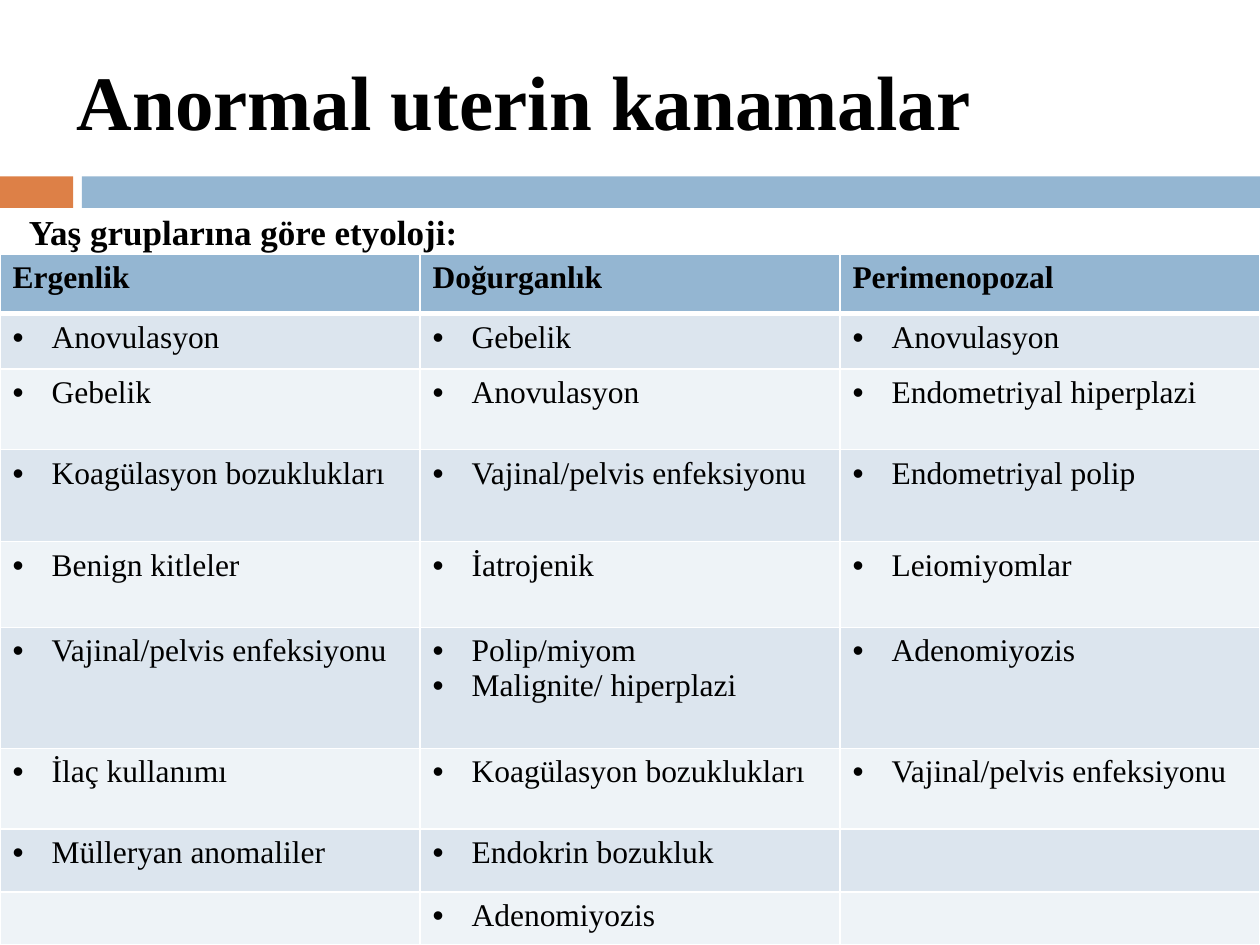
"""Build the slide on causes of abnormal uterine bleeding by age group."""
from lxml import etree
from pptx import Presentation
from pptx.dml.color import RGBColor
from pptx.enum import shapes, text
from pptx.oxml import ns
from pptx.util import Inches, Pt

FONT = "Times New Roman"
BLACK = RGBColor(0, 0, 0)
WHITE = RGBColor(255, 255, 255)
ORANGE = RGBColor(0xDD, 0x80, 0x47)
BLUE = RGBColor(0x94, 0xB6, 0xD2)
BANDS = [RGBColor(0xDC, 0xE5, 0xEE), RGBColor(0xEE, 0xF3, 0xF7)]

TITLE = "Anormal uterin kanamalar"
INTRO = "Yaş gruplarına göre etyoloji:"
BARS = [(0, 0.58, ORANGE), (0.65, 9.35, BLUE)]
HEADS = ["Ergenlik", "Doğurganlık", "Perimenopozal"]
ROWS = [
    (0.44, ["Anovulasyon"], ["Gebelik"], ["Anovulasyon"]),
    (0.64, ["Gebelik"], ["Anovulasyon"], ["Endometriyal hiperplazi"]),
    (0.73, ["Koagülasyon bozuklukları"], ["Vajinal/pelvis enfeksiyonu"],
     ["Endometriyal polip"]),
    (0.68, ["Benign kitleler"], ["İatrojenik"], ["Leiomiyomlar"]),
    (0.96, ["Vajinal/pelvis enfeksiyonu"],
     ["Polip/miyom", "Malignite/ hiperplazi"], ["Adenomiyozis"]),
    (0.64, ["İlaç kullanımı"], ["Koagülasyon bozuklukları"],
     ["Vajinal/pelvis enfeksiyonu"]),
    (0.5, ["Mülleryan anomaliler"], ["Endokrin bozukluk"], []),
    (0.42, [], ["Adenomiyozis"], []),
]


def add_run(para, words, size, bold):
    run = para.add_run()
    run.text = words
    font = run.font
    font.name, font.size, font.bold = FONT, Pt(size), bold
    font.color.rgb = BLACK


def add_text(slide, box, words, size, anchor):
    frame = slide.shapes.add_textbox(*map(Inches, box)).text_frame
    frame.word_wrap = True
    frame.vertical_anchor = anchor
    para = frame.paragraphs[0]
    add_run(para, words, size, True)
    return para


def add_bullet(para):
    props = para._p.get_or_add_pPr()
    props.set("marL", str(Inches(0.31)))
    props.set("indent", str(-Inches(0.31)))
    etree.SubElement(props, ns.qn("a:buFont")).set("typeface", "Arial")
    etree.SubElement(props, ns.qn("a:buChar")).set("char", "•")


def add_edges(cell, widths):
    props = cell._tc.get_or_add_tcPr()
    for spot, (side, width) in enumerate(zip("LRTB", widths)):
        line = etree.Element(ns.qn(f"a:ln{side}"), w=str(Pt(width)))
        fill = etree.SubElement(line, ns.qn("a:solidFill"))
        etree.SubElement(fill, ns.qn("a:srgbClr")).set("val", str(WHITE))
        props.insert(spot, line)


def fill_cell(cell, items, color, head, widths):
    cell.fill.solid()
    cell.fill.fore_color.rgb = color
    add_edges(cell, widths)
    frame = cell.text_frame
    for num, item in enumerate(items):
        para = frame.add_paragraph() if num else frame.paragraphs[0]
        if not head:
            add_bullet(para)
        add_run(para, item, 18, head)


def add_grid(slide):
    lines = [(0.47, *([head] for head in HEADS)), *ROWS]
    high = sum(line[0] for line in lines)
    table = slide.shapes.add_table(
        len(lines), len(HEADS), 0, Inches(2.02), Inches(10), Inches(high)).table
    for col in table.columns:
        col.width = Inches(10 / len(HEADS))
    for r, (tall, *cells) in enumerate(lines):
        table.rows[r].height = Inches(tall)
        color = BANDS[(r - 1) % 2] if r else BLUE
        widths = (1, 1, 3 if r == 1 else 1, 1 if r else 3)
        for c, items in enumerate(cells):
            fill_cell(table.cell(r, c), items, color, r == 0, widths)


def main():
    deck = Presentation()
    deck.slide_width, deck.slide_height = Inches(10), Inches(7.5)
    slide = deck.slides.add_slide(deck.slide_layouts[6])
    for left, wide, color in BARS:
        bar = slide.shapes.add_shape(
            shapes.MSO_SHAPE.RECTANGLE, *map(Inches, (left, 1.4, wide, 0.25)))
        bar.shadow.inherit = False
        bar.fill.solid()
        bar.fill.fore_color.rgb = color
        bar.line.fill.background()
    add_text(slide, (0.51, 0.25, 9.21, 1.08), TITLE, 44, text.MSO_ANCHOR.MIDDLE)
    intro = add_text(slide, (0.13, 1.62, 9.88, 5.75), INTRO, 20,
                     text.MSO_ANCHOR.TOP)
    intro.space_before = Pt(7)
    add_grid(slide)
    deck.save("out.pptx")


if __name__ == "__main__":
    main()
